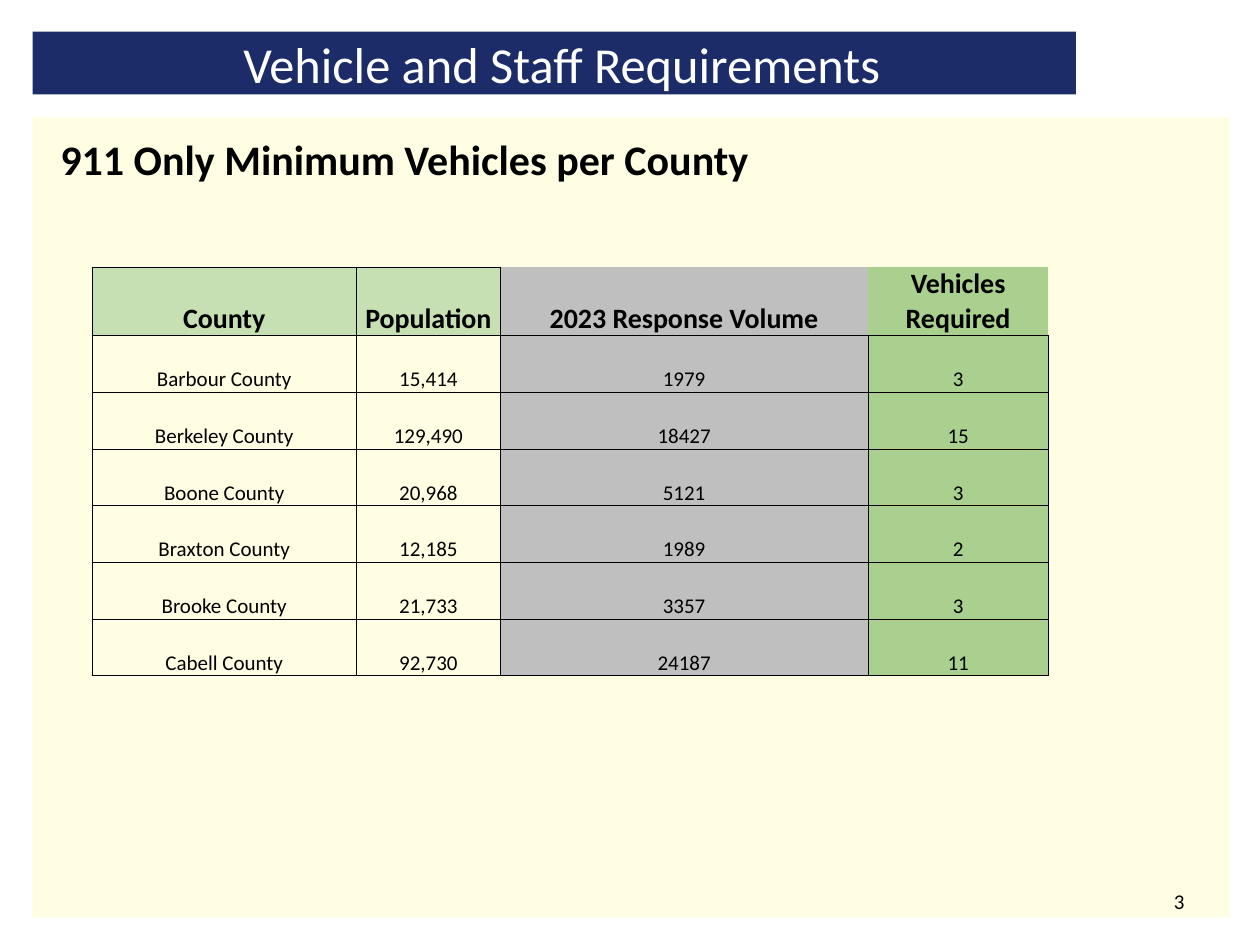
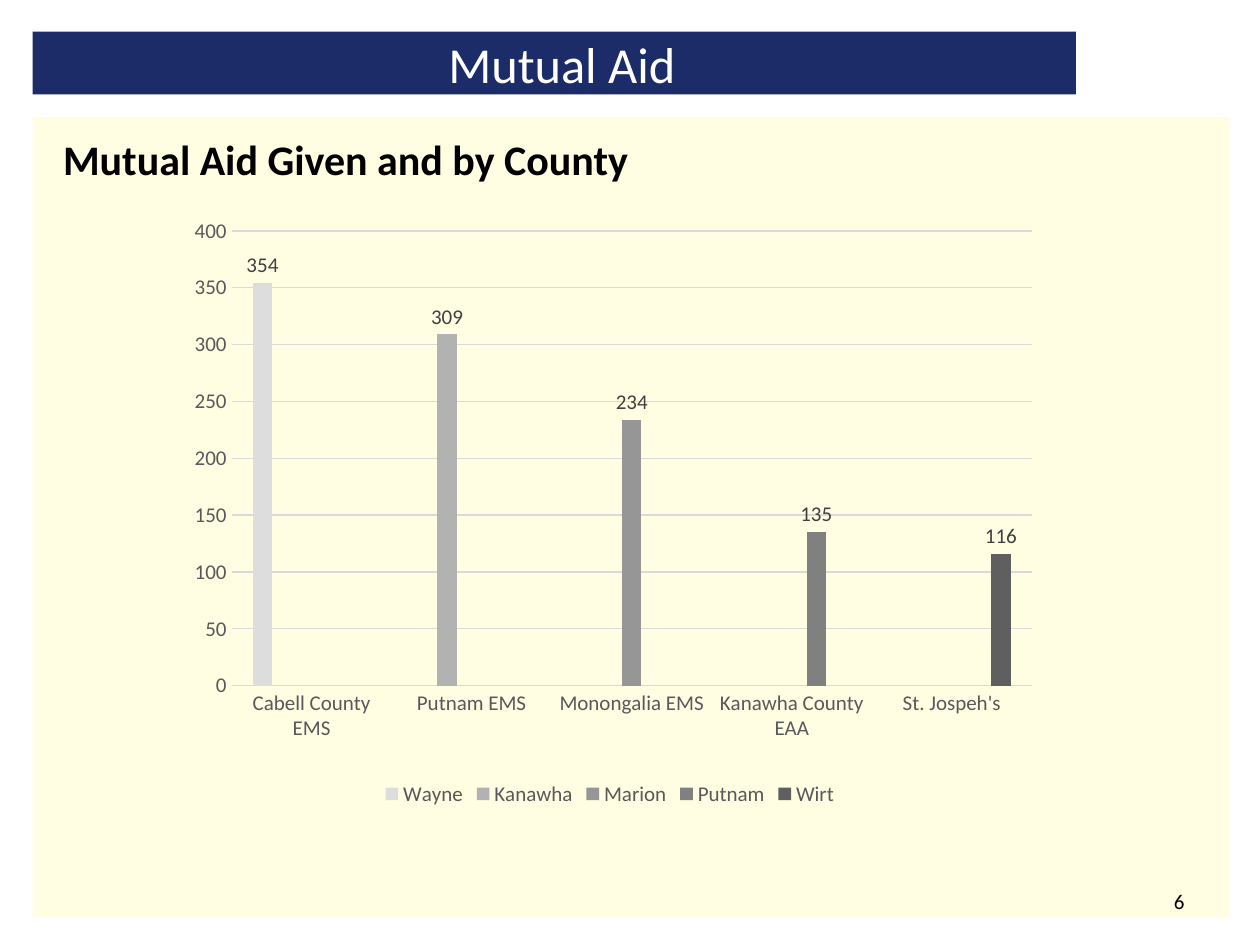
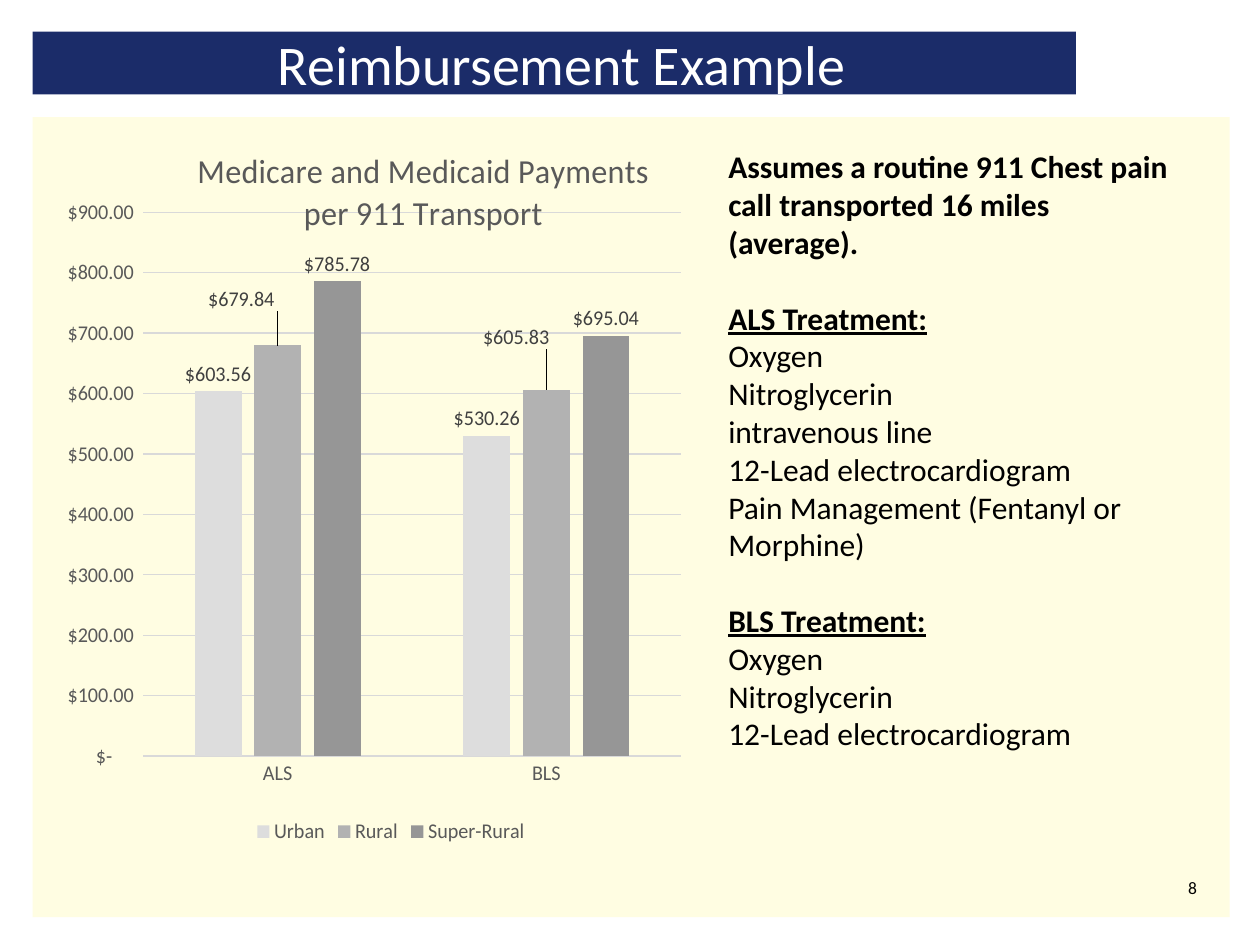
import lxml.etree
import pptx
import pptx.chart.data
import pptx.dml.color
import pptx.enum.chart
import pptx.enum.shapes
import pptx.enum.text
import pptx.oxml
import pptx.oxml.ns
import pptx.util

RGBColor = pptx.dml.color.RGBColor
Pt = pptx.util.Pt
ALIGN = pptx.enum.text.PP_ALIGN
ANCHOR = pptx.enum.text.MSO_ANCHOR
qn = pptx.oxml.ns.qn

NAVY = RGBColor(0x1B, 0x2C, 0x69)
CREAM = RGBColor(0xFF, 0xFD, 0xE2)
WHITE = RGBColor(0xFF, 0xFF, 0xFF)
BLACK = RGBColor(0, 0, 0)
LIGHT_GREEN = RGBColor(0xC6, 0xE0, 0xB4)
GREEN = RGBColor(0xA9, 0xD0, 0x8E)
SILVER = RGBColor(0xBF, 0xBF, 0xBF)
AXIS_TEXT = RGBColor(0x59, 0x59, 0x59)
LABEL_TEXT = RGBColor(0x40, 0x40, 0x40)
GRID_LINE = RGBColor(0xD9, 0xD9, 0xD9)
SERIES_GREYS = [RGBColor(g, g, g) for g in (0xDD, 0xB2, 0x96, 0x80, 0x5F)]
FONT = "Calibri"
DOLLARS = '_("$"* #,##0.00_);_("$"* \\(#,##0.00\\);_("$"* "-"??_);_(@_)'

deck = pptx.Presentation()
deck.slide_width = pptx.util.Inches(10)
deck.slide_height = pptx.util.Inches(7.5)
COLUMN = deck.slide_width / 100
ROW = deck.slide_height / 75


def grid(left, top, width, height):
    """Turn columns and rows of the 100 by 75 slide grid into lengths."""
    return [round(n * unit) for n, unit in
            zip((left, top, width, height), (COLUMN, ROW, COLUMN, ROW))]


def write(frame, text, size=18, bold=False, underline=False, color=BLACK,
          align=ALIGN.LEFT, before=0, margin=0):
    """Add one unbulleted paragraph, using the empty first one if there is one."""
    para = frame.paragraphs[0] if not frame.text else frame.add_paragraph()
    para.alignment = align
    para.space_before = Pt(before)
    properties = para._p.get_or_add_pPr()
    properties.set("marL", str(round(margin)))
    properties.set("indent", "0")
    lxml.etree.SubElement(properties, qn("a:buNone"))
    span = para.add_run()
    span.text = text
    span.font.name = FONT
    span.font.size = Pt(size)
    span.font.bold = bold
    span.font.underline = underline
    span.font.color.rgb = color


# Title, title size, body place, page number, number place, number size
PAGES = [
    ("Vehicle and Staff Requirements", 28.8, (4.8, 10.6, 90, 56.8),
     "3", (71.7, 69.5, 23.3, 4), 12),
    ("Mutual Aid", 28.8, (5, 10.6, 90, 56.8), "6", (71.7, 69.5, 23.3, 4), 12),
    ("Reimbursement Example", 32, (57.8, 11.7, 34.9, 54.5),
     "8", (91.2, 69.5, 3.8, 1.9), 10),
]
pages, bodies = [], []
for title_text, title_size, body_place, number, number_place, number_size in PAGES:
    page = deck.slides.add_slide(deck.slide_layouts[1])
    title, body = page.placeholders
    title.left, title.top, title.width, title.height = grid(2.6, 2.5, 82.8, 5)
    title.fill.solid()
    title.fill.fore_color.rgb = NAVY
    body.left, body.top, body.width, body.height = grid(*body_place)
    number_box = page.shapes.add_textbox(*grid(*number_place))
    for box, anchor in ((title, ANCHOR.MIDDLE), (body, ANCHOR.TOP),
                        (number_box, ANCHOR.MIDDLE)):
        frame = box.text_frame
        frame.word_wrap = True
        frame.auto_size = pptx.enum.text.MSO_AUTO_SIZE.NONE
        frame.vertical_anchor = anchor
        frame.margin_left = frame.margin_right = 0
        frame.margin_top = frame.margin_bottom = 0
    if number_size == 12:
        number_box.text_frame.margin_right = round(COLUMN)
    write(title.text_frame, title_text, size=title_size, color=WHITE,
          align=ALIGN.CENTER, margin=1.2 * COLUMN)
    write(number_box.text_frame, number, size=number_size, align=ALIGN.RIGHT)
    pages.append(page)
    bodies.append(body.text_frame)

# The cream panel belongs to the master, behind everything else
panel = pages[0].shapes.add_shape(
    pptx.enum.shapes.MSO_SHAPE.RECTANGLE, *grid(2.6, 9.3, 95, 63.5))
panel.shadow.inherit = False
panel.fill.solid()
panel.fill.fore_color.rgb = CREAM
panel.line.fill.background()
deck.slide_master.shapes.element.insert(2, panel.element)

# Body text
write(bodies[0], "911 Only Minimum Vehicles per County", size=24, bold=True)
write(bodies[1], "Mutual Aid Given and by County", size=24, bold=True)
write(bodies[2], "Assumes a routine 911 Chest pain call transported 16 miles (average).",
      bold=True)
TREATMENTS = {
    "ALS Treatment:": ["Oxygen", "Nitroglycerin", "intravenous line",
                       "12-Lead electrocardiogram",
                       "Pain Management (Fentanyl or Morphine)"],
    "BLS Treatment:": ["Oxygen", "Nitroglycerin", "12-Lead electrocardiogram"],
}
for heading, treatments in TREATMENTS.items():
    write(bodies[2], heading, bold=True, underline=True, before=21.6)
    for treatment in treatments:
        write(bodies[2], treatment)

# County table
COUNTIES = [
    ("County", "Population", "2023 Response Volume", "Vehicles Required"),
    ("Barbour County", "15,414", "1979", "3"),
    ("Berkeley County", "129,490", "18427", "15"),
    ("Boone County", "20,968", "5121", "3"),
    ("Braxton County", "12,185", "1989", "2"),
    ("Brooke County", "21,733", "3357", "3"),
    ("Cabell County", "92,730", "24187", "11"),
]
HEADER_FILLS = [LIGHT_GREEN, LIGHT_GREEN, SILVER, GREEN]
BODY_FILLS = [None, None, SILVER, GREEN]
HEADER_SIDES = ["LRTB", "LRTB", "LB", "B"]
table = pages[0].shapes.add_table(
    len(COUNTIES), 4, *grid(7.3, 21.2, 76, 32.4)).table
table.first_row = table.horz_banding = False
for column, width in zip(table.columns, (21, 11.4, 29.2, 14.3)):
    column.width = round(width * COLUMN)
for row_index, county in enumerate(COUNTIES):
    header = row_index == 0
    table.rows[row_index].height = round((5.4 if header else 4.5) * ROW)
    fills = HEADER_FILLS if header else BODY_FILLS
    for column_index, text in enumerate(county):
        cell = table.cell(row_index, column_index)
        cell.margin_left = cell.margin_right = 0
        cell.margin_top = cell.margin_bottom = 0
        cell.vertical_anchor = ANCHOR.BOTTOM
        write(cell.text_frame, text, size=16 if header else 12, bold=header,
              align=ALIGN.CENTER)
        if fills[column_index] is None:
            cell.fill.background()
        else:
            cell.fill.solid()
            cell.fill.fore_color.rgb = fills[column_index]
        sides = HEADER_SIDES[column_index] if header else "LRTB"
        for position, side in enumerate("LRTB"):
            border = pptx.oxml.parse_xml(
                f'<a:ln{side} {pptx.oxml.ns.nsdecls("a")} w="{Pt(0.5)}">'
                + (f'<a:solidFill><a:srgbClr val="{BLACK}"/></a:solidFill>'
                   if side in sides else '<a:noFill/>')
                + f'</a:ln{side}>')
            cell._tc.get_or_add_tcPr().insert(position, border)

# Column charts
LAYOUT = ('<c:layout %s><c:manualLayout>{}</c:manualLayout></c:layout>'
          % pptx.oxml.ns.nsdecls("c"))
CHARTS = [
    dict(page=pages[1], place=(13.5, 16.9, 69.8, 47.5), title=None,
         plot=(0.07, 0.03, 0.91, 0.76), top=400, step=50, number_format="General",
         categories=["Cabell County EMS", "Putnam EMS", "Monongalia EMS",
                     "Kanawha County EAA", "St. Jospeh's"],
         series={"Wayne": [354, None, None, None, None],
                 "Kanawha": [None, 309, None, None, None],
                 "Marion": [None, None, 234, None, None],
                 "Putnam": [None, None, None, 135, None],
                 "Wirt": [None, None, None, None, 116]},
         moved_labels=[]),
    dict(page=pages[2], place=(5, 10.6, 50, 56.8),
         title="Medicare and Medicaid Payments per 911 Transport",
         plot=(0.09, 0.11, 0.89, 0.76), top=900, step=100, number_format=DOLLARS,
         categories=["ALS", "BLS"],
         series={"Urban": [603.56, 530.26], "Rural": [679.84, 605.83],
                 "Super-Rural": [785.78, 695.04]},
         moved_labels=[(1, 0, -0.06, -0.04), (1, 1, -0.05, -0.05)]),
]
for entry in CHARTS:
    data = pptx.chart.data.CategoryChartData(number_format=entry["number_format"])
    data.categories = entry["categories"]
    for name, values in entry["series"].items():
        data.add_series(name, values)
    chart = entry["page"].shapes.add_chart(
        pptx.enum.chart.XL_CHART_TYPE.COLUMN_CLUSTERED, *grid(*entry["place"]),
        data).chart
    chart.font.name = FONT
    chart.font.size = Pt(12)
    chart.font.color.rgb = AXIS_TEXT
    chart.has_title = entry["title"] is not None
    if chart.has_title:
        write(chart.chart_title.text_frame, entry["title"], size=19.2,
              color=AXIS_TEXT, align=ALIGN.CENTER)
        chart.chart_title.include_in_layout = False
        title_element = chart.chart_title._element
        for old_layout in title_element.findall(qn("c:layout")):
            title_element.remove(old_layout)
        title_element.find(qn("c:tx")).addnext(pptx.oxml.parse_xml(LAYOUT.format(
            '<c:xMode val="edge"/><c:yMode val="edge"/>'
            '<c:x val="0.17"/><c:y val="0.01"/>')))

    chart.has_legend = True
    chart.legend.position = pptx.enum.chart.XL_LEGEND_POSITION.BOTTOM
    chart.legend.include_in_layout = False
    for axis in (chart.category_axis, chart.value_axis):
        axis.major_tick_mark = axis.minor_tick_mark = pptx.enum.chart.XL_TICK_MARK.NONE
    axis_line = chart.category_axis.format.line
    grid_line = chart.value_axis.major_gridlines.format.line
    for line in (axis_line, grid_line):
        line.color.rgb = GRID_LINE
        line.width = Pt(0.75)
    chart.value_axis.format.line.fill.background()
    chart.value_axis.minimum_scale = 0
    chart.value_axis.maximum_scale = entry["top"]
    chart.value_axis.major_unit = entry["step"]
    chart.value_axis.tick_labels.number_format = entry["number_format"]
    chart.value_axis.tick_labels.number_format_is_linked = False

    plot = chart.plots[0]
    plot.gap_width = 219
    plot.overlap = -27
    plot.vary_by_categories = False
    for series, grey in zip(plot.series, SERIES_GREYS):
        series.format.fill.solid()
        series.format.fill.fore_color.rgb = grey
        labels = series.data_labels
        labels.show_value = True
        labels.position = pptx.enum.chart.XL_LABEL_POSITION.OUTSIDE_END
        labels.number_format = entry["number_format"]
        labels.number_format_is_linked = False
        labels.font.name = FONT
        labels.font.size = Pt(12)
        labels.font.color.rgb = LABEL_TEXT
    for series_index, point_index, shift_x, shift_y in entry["moved_labels"]:
        series = plot.series[series_index]
        label = series.points[point_index].data_label
        label.font.name = FONT
        label.font.size = Pt(12)
        label.font.color.rgb = LABEL_TEXT
        label.position = pptx.enum.chart.XL_LABEL_POSITION.OUTSIDE_END
        label_element = series.data_labels._element.findall(qn("c:dLbl"))[point_index]
        label_element.find(qn("c:idx")).addnext(pptx.oxml.parse_xml(LAYOUT.format(
            f'<c:x val="{shift_x}"/><c:y val="{shift_y}"/>')))

    plot_area = chart._chartSpace.chart.plotArea
    for old_layout in plot_area.findall(qn("c:layout")):
        plot_area.remove(old_layout)
    edges = "".join(f'<c:{name} val="{share}"/>'
                    for name, share in zip("xywh", entry["plot"]))
    plot_area.insert(0, pptx.oxml.parse_xml(LAYOUT.format(
        '<c:layoutTarget val="inner"/><c:xMode val="edge"/><c:yMode val="edge"/>'
        + edges)))

deck.save("out.pptx")
